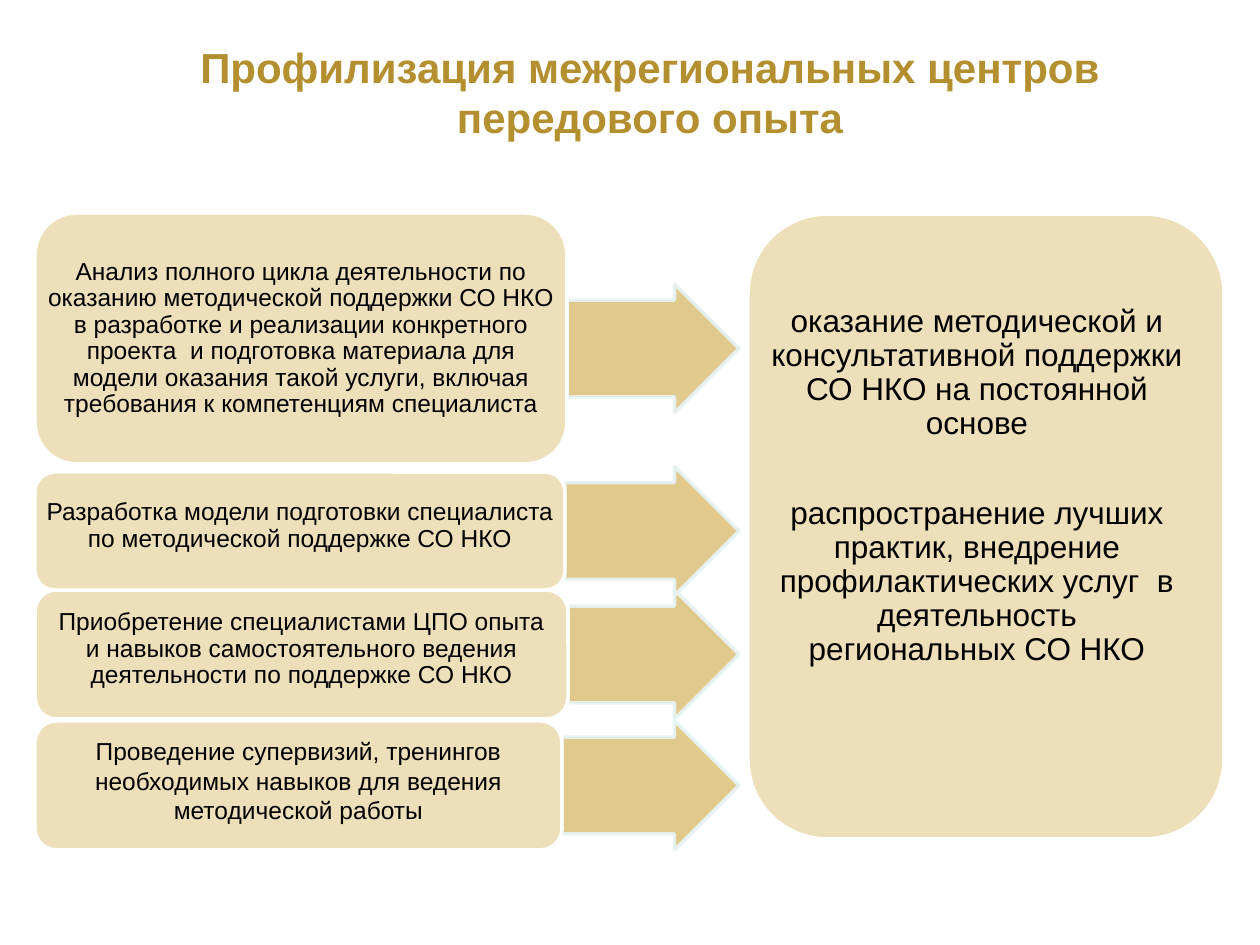
from lxml.etree import SubElement
from pptx import Presentation
from pptx.dml.color import RGBColor
from pptx.enum.shapes import MSO_SHAPE
from pptx.enum.text import MSO_ANCHOR, MSO_AUTO_SIZE, PP_ALIGN
from pptx.oxml.ns import qn
from pptx.util import Emu, Pt

THEME = {
    "font": "Arial", "title": "B38F2F", "text": "000000", "box": "EDDFB9",
    "box_line": "FFFFFF", "arrow": "DDC47F", "arrow_line": "E7F3F4",
    "title_size": 24, "result_size": 18, "task_size": 14, "line": 2,
}
PX = 914400 / 126

TITLE = "Профилизация межрегиональных центров передового опыта"
# Back to front; "lift" raises the text and "drop" lowers the arrow from the box centre
TASKS = [
    {"top": 213, "width": 532, "height": 251, "lift": 0, "drop": 10, "spacing": 0.9, "text": [
        "Анализ полного цикла деятельности по оказанию методической поддержки СО НКО "
        "в разработке и реализации конкретного проекта  и подготовка материала для "
        "модели оказания такой услуги, включая требования к компетенциям специалиста"]},
    {"top": 590, "width": 533, "height": 129, "lift": 5, "drop": 0, "spacing": 0.9, "text": [
        "Приобретение специалистами ЦПО опыта",
        "и навыков самостоятельного ведения деятельности по поддержке СО НКО"]},
    {"top": 472, "width": 530, "height": 118, "lift": 5, "drop": 0, "spacing": 0.9, "text": [
        "Разработка модели подготовки специалиста по методической поддержке СО НКО"]},
    {"top": 721, "width": 527, "height": 129, "lift": 5, "drop": 0, "spacing": 1.0, "text": [
        "Проведение супервизий, тренингов необходимых навыков для ведения методической работы"]},
]
RESULTS = [
    "оказание методической и консультативной поддержки СО НКО на постоянной основе",
    "распространение лучших практик, внедрение профилактических услуг  в деятельность "
    "региональных СО НКО",
]
TASK_LEFT, ARROW_TIP, ARROW_HEIGHT = 35, 739, 129
RESULT_BOX, RESULT_TEXT = (748, 214, 476, 625), (757, 204, 440, 564)
TITLE_BOX = (134, 35, 1032, 139)


def px(*lengths):
    return [Emu(round(n * PX)) for n in lengths]


def add_panel(slide, kind, box, fill, line, alpha=None):
    s = slide.shapes.add_shape(kind, *px(*box))
    s.shadow.inherit = False
    s.fill.solid()
    s.line.fill.solid()
    s.line.width = Pt(THEME["line"])
    for color, value in ((s.fill.fore_color, fill), (s.line.color, line)):
        color.rgb = RGBColor.from_string(THEME[value])
    if alpha:
        for clr in s._element.spPr.iter(qn("a:srgbClr")):
            SubElement(clr, qn("a:alpha"), val=str(alpha * 1000))
    return s


def write(s, lines, size, color, bold=False, spacing=1.0, gap=0, margins=(13, 6),
          anchor=MSO_ANCHOR.MIDDLE):
    """Fill a shape with centred paragraphs; gap is the points between them."""
    tf = s.text_frame
    x, y = px(*margins)
    frame = {"word_wrap": True, "auto_size": MSO_AUTO_SIZE.NONE, "vertical_anchor": anchor,
             "margin_left": x, "margin_right": x, "margin_top": y, "margin_bottom": y}
    for name, value in frame.items():
        setattr(tf, name, value)
    for i, line in enumerate(lines):
        p = tf.add_paragraph() if i else tf.paragraphs[0]
        p.alignment, p.line_spacing = PP_ALIGN.CENTER, spacing
        p.space_before = Pt(gap if i else 0)
        r = p.add_run()
        r.text = line
        for name, value in {"name": THEME["font"], "size": Pt(THEME[size]), "bold": bold}.items():
            setattr(r.font, name, value)
        r.font.color.rgb = RGBColor.from_string(THEME[color])


def add_task(slide, task):
    top, width, height = task["top"], task["width"], task["height"]
    right = TASK_LEFT + width
    arrow_top = top + (height - ARROW_HEIGHT) / 2 + task["drop"]
    arrow = add_panel(slide, MSO_SHAPE.RIGHT_ARROW,
                      (right, arrow_top, ARROW_TIP - right, ARROW_HEIGHT),
                      "arrow", "arrow_line", alpha=90)
    arrow.adjustments[0], arrow.adjustments[1] = 0.75, 0.5
    add_panel(slide, MSO_SHAPE.ROUNDED_RECTANGLE, (TASK_LEFT, top, width, height),
              "box", "box_line")
    label = slide.shapes.add_textbox(*px(TASK_LEFT, top - task["lift"], width, height))
    write(label, task["text"], "task_size", "text", spacing=task["spacing"], margins=(8, 4))


def main():
    prs = Presentation()
    prs.slide_width, prs.slide_height = px(1260, 945)
    slide = prs.slides.add_slide(prs.slide_layouts[5])
    title = slide.shapes.title
    title.left, title.top, title.width, title.height = px(*TITLE_BOX)
    write(title, [TITLE], "title_size", "title", bold=True, anchor=MSO_ANCHOR.TOP)

    for task in TASKS:
        add_task(slide, task)

    add_panel(slide, MSO_SHAPE.ROUNDED_RECTANGLE, RESULT_BOX, "box", "box_line")
    results = slide.shapes.add_textbox(*px(*RESULT_TEXT))
    write(results, RESULTS, "result_size", "text", spacing=0.9, gap=32)
    prs.save("out.pptx")


if __name__ == "__main__":
    main()
